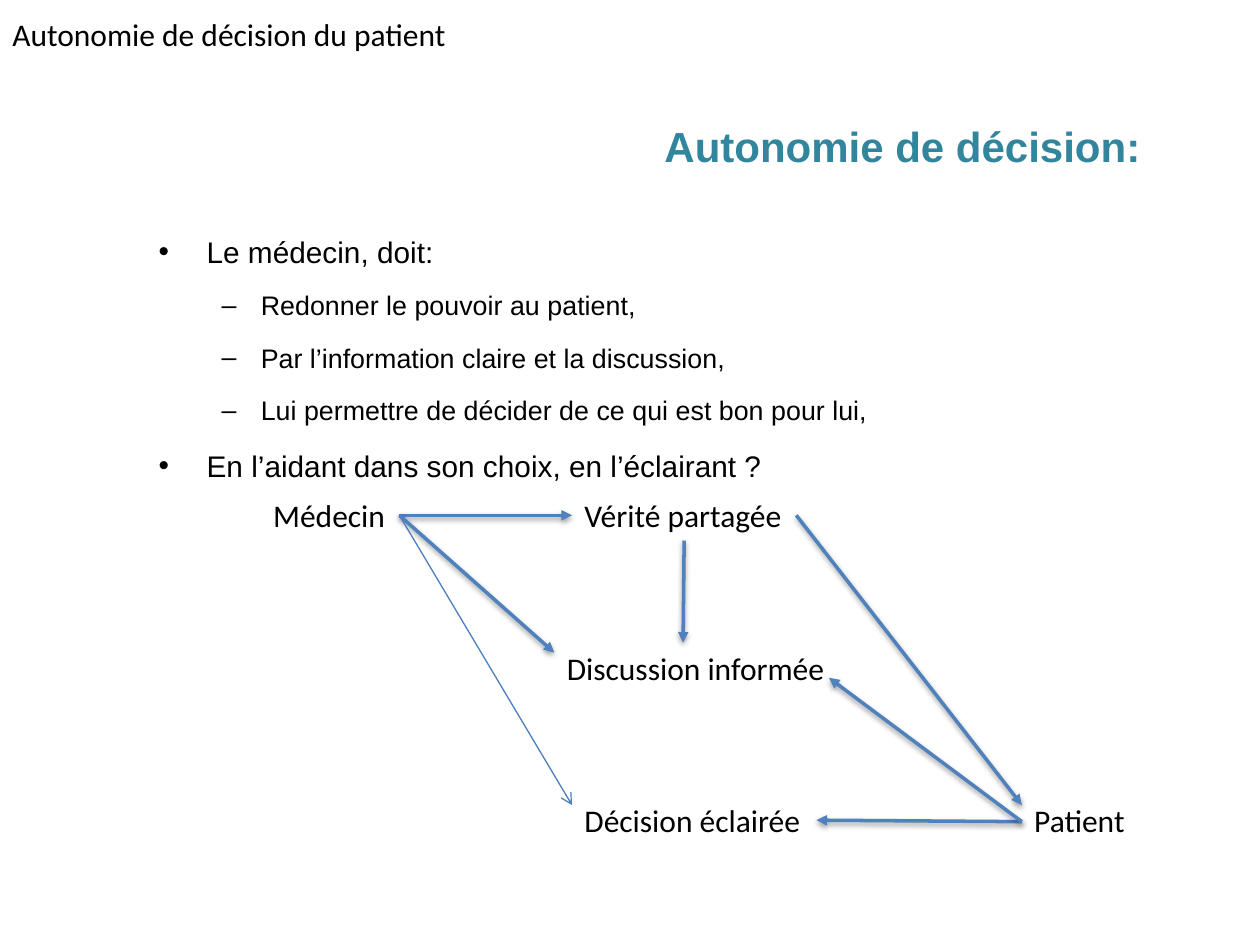
from pptx import Presentation
from pptx.dml.color import RGBColor as RGB
from pptx.enum.shapes import MSO_CONNECTOR as LINE
from pptx.enum.text import MSO_ANCHOR as ANCHOR, PP_ALIGN as ALIGN
from pptx.oxml import parse_xml
from pptx.oxml.ns import nsdecls
from pptx.util import Emu, Inches, Pt

COLORS = {"text": "000000", "title": "31859C", "arrow": "4F81BD", "thin": "4B7EBC"}
WIDTH, HEIGHT = Inches(10), Inches(7.5)
COL, ROW = WIDTH // 100, HEIGHT // 100  # grid of 100 columns and 100 rows

# Indent level: size, left margin, hanging indent, bullet
LEVELS = [(17, 0.38, -0.38, "•"), (15.3, 0.81, -0.31, "–")]
DUTIES = [
    (0, "Le médecin, doit:"),
    (1, "Redonner le pouvoir au patient,"),
    (1, "Par l’information claire et la discussion,"),
    (1, "Lui permettre de décider de ce qui est bon pour lui,"),
    (0, "En l’aidant dans son choix, en l’éclairant ?"),
]

# Step: column, level in the diagram, width in columns
STEPS = {
    "Médecin": (0, 0, 11),
    "Vérité partagée": (24.7, 0, 17.8),
    "Discussion informée": (23.3, 1, 22.7),
    "Décision éclairée": (24.7, 2, 19.4),
    "Patient": (60.4, 2, 9.3),
}
STEP_HEIGHT, STEP_PITCH = 5.33, 16.13

# Arrow: start step, share of its box, end step, share of its box
FLOWS = [
    ("Vérité partagée", (0.5, 1), "Discussion informée", (0.45, 0)),
    ("Médecin", (1, 0.5), "Vérité partagée", (0, 0.5)),
    ("Médecin", (1, 0.5), "Discussion informée", (0, 0.2)),
    ("Patient", (0, 0.53), "Décision éclairée", (1, 0.5)),
    ("Patient", (0, 0.53), "Discussion informée", (0.96, 0.7)),
    ("Vérité partagée", (1, 0.5), "Patient", (0, 0.2)),
]
THIN_FLOW = ("Médecin", (1, 0.5), "Décision éclairée", (0, 0.2))

SHADOW = (
    '<a:outerShdw blurRad="40000" dist="20000" dir="5400000" rotWithShape="0">'
    '<a:srgbClr val="000000"><a:alpha val="38000"/></a:srgbClr></a:outerShdw>'
)


def add_frame(slide, box, wrap=True, left_inset=0.1):
    left, top, width, height = box
    frame = slide.shapes.add_textbox(
        Emu(round(left * COL)), Emu(round(top * ROW)),
        Emu(round(width * COL)), Emu(round(height * ROW))).text_frame
    frame.word_wrap = wrap
    frame.vertical_anchor = ANCHOR.TOP
    frame.margin_left = Inches(left_inset)
    return frame


def add_run(paragraph, words, size, font="Calibri", color="text", bold=False):
    run = paragraph.add_run()
    run.text = words
    run.font.name, run.font.size, run.font.bold = font, Pt(size), bold
    run.font.color.rgb = RGB.from_string(COLORS[color])


def add_label(slide, box, words):
    add_run(add_frame(slide, box, wrap=False).paragraphs[0], words, 18)


def add_title(slide, box):
    heading = add_frame(slide, box, left_inset=0.2).paragraphs[0]
    heading.alignment = ALIGN.RIGHT
    add_run(heading, "Autonomie de décision:", 24, "Arial", "title", True)


def add_duties(slide, box):
    frame = add_frame(slide, box, left_inset=0.2)
    for index, (level, words) in enumerate(DUTIES):
        duty = frame.add_paragraph() if index else frame.paragraphs[0]
        size, margin, indent, bullet = LEVELS[level]
        duty.level = level
        duty.line_spacing = 1.4
        duty.space_before = Pt(4.2 if index else 0)
        props = duty._p.get_or_add_pPr()
        props.set("marL", str(Inches(margin)))
        props.set("indent", str(Inches(indent)))
        props.append(parse_xml(f'<a:buFont {nsdecls("a")} typeface="Arial"/>'))
        props.append(parse_xml(f'<a:buChar {nsdecls("a")} char="{bullet}"/>'))
        add_run(duty, words, size, "Arial")


def add_arrow(slide, start, end, color="arrow", weight=2, head="triangle", effect=SHADOW):
    points = [Emu(round(n)) for x, y in (start, end) for n in (x * COL, y * ROW)]
    arrow = slide.shapes.add_connector(LINE.STRAIGHT, *points)
    arrow.line.color.rgb = RGB.from_string(COLORS[color])
    arrow.line.width = Pt(weight)
    arrow.line._get_or_add_ln().append(
        parse_xml(f'<a:tailEnd {nsdecls("a")} type="{head}"/>'))
    arrow._element.spPr.append(
        parse_xml(f'<a:effectLst {nsdecls("a")}>{effect}</a:effectLst>'))


def add_diagram(slide, box):
    left, top = box[:2]
    boxes = {
        step: (left + col, top + level * STEP_PITCH, width, STEP_HEIGHT)
        for step, (col, level, width) in STEPS.items()
    }

    def ends(flow):
        for step, (across, down) in (flow[:2], flow[2:]):
            x, y, width, height = boxes[step]
            yield x + across * width, y + down * height

    for step, step_box in boxes.items():
        add_label(slide, step_box, step)
    for flow in FLOWS:
        add_arrow(slide, *ends(flow))
    add_arrow(slide, *ends(THIN_FLOW), color="thin", weight=0.75, head="arrow", effect="")


def main():
    deck = Presentation()
    deck.slide_width, deck.slide_height = WIDTH, HEIGHT
    slide = deck.slides.add_slide(deck.slide_layouts[6])
    # Boxes are left, top, width, height in grid columns and rows
    add_title(slide, (3.1, 12.13, 88.4, 16.67))
    add_duties(slide, (10.6, 22.53, 88.5, 29.87))
    add_diagram(slide, (20.7, 51.87, 69.7, 37.6))
    # Running header
    add_label(slide, (0, 0.93, 36.9, 5.33), "Autonomie de décision du patient")
    deck.save("out.pptx")


if __name__ == "__main__":
    main()
